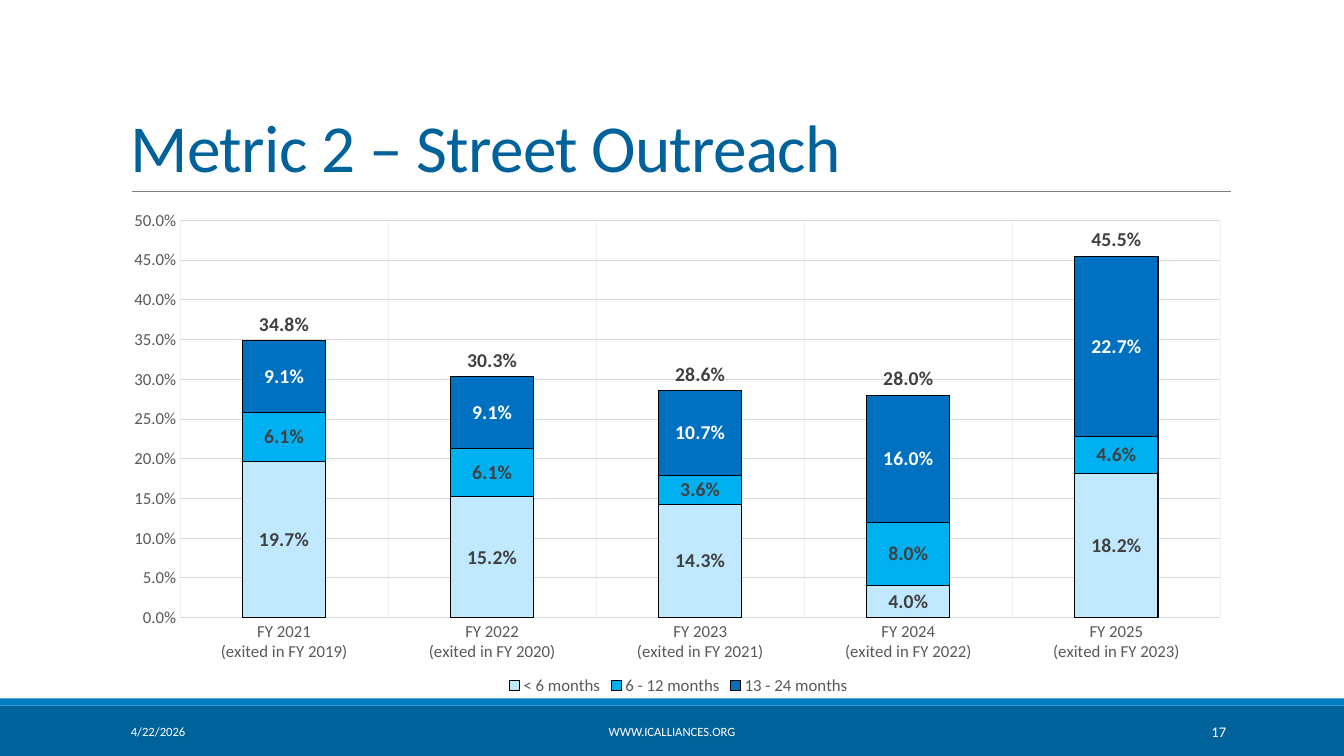
"""Build the Metric 2 street outreach slide with a stacked column chart and totals."""
import pptx
import pptx.chart.data
import pptx.dml.color
import pptx.enum.chart
import pptx.enum.shapes
import pptx.enum.text
import pptx.oxml
import pptx.oxml.ns
import pptx.util

Inches = pptx.util.Inches
Pt = pptx.util.Pt
qn = pptx.oxml.ns.qn
Align = pptx.enum.text.PP_ALIGN
Anchor = pptx.enum.text.MSO_ANCHOR
FONT = "Calibri"
COLORS = {
    "navy": "00629B", "band": "007EC4", "rule": "808080", "white": "FFFFFF",
    "grid": "D9D9D9", "faint": "F2F2F2", "axis": "595959", "label": "404040",
    "black": "000000", "short": "C0E9FF", "middle": "00B0F0", "long": "0070C0",
}


def rgb(name):
    return pptx.dml.color.RGBColor.from_string(COLORS[name])


def set_font(font, size, color, bold=False):
    font.name = FONT
    font.size = Pt(size)
    font.bold = bold
    font.color.rgb = rgb(color)


deck = pptx.Presentation()
deck.slide_width = Inches(13.33)
deck.slide_height = Inches(7.5)
slide = deck.slides.add_slide(deck.slide_layouts[6])

for top, height, color in [(7, 0.5, "navy"), (6.93, 0.07, "band")]:
    footer_band = slide.shapes.add_shape(
        pptx.enum.shapes.MSO_SHAPE.RECTANGLE,
        Inches(0), Inches(top), Inches(13.33), Inches(height))
    footer_band.shadow.inherit = False
    footer_band.fill.solid()
    footer_band.fill.fore_color.rgb = rgb(color)
    footer_band.line.fill.background()

title_rule = slide.shapes.add_connector(
    pptx.enum.shapes.MSO_CONNECTOR.STRAIGHT,
    Inches(1.31), Inches(1.9), Inches(12.21), Inches(1.9))
title_rule.line.color.rgb = rgb("rule")
title_rule.line.width = Pt(0.5)
title_rule._element.spPr.append(pptx.oxml.parse_xml(
    f'<a:effectLst {pptx.oxml.ns.nsdecls("a")}/>'))

texts = [
    ("Metric 2 – Street Outreach", 1.2, 0.31, 11, 1.59, 48, "navy", Align.LEFT, Anchor.BOTTOM),
    ("4/22/2026", 1.2, 7.06, 2.7, 0.4, 9, "white", Align.LEFT, Anchor.MIDDLE),
    ("WWW.ICALLIANCES.ORG", 4.03, 7.06, 5.27, 0.4, 9, "white", Align.CENTER, Anchor.MIDDLE),
    ("17", 10.83, 7.06, 1.43, 0.4, 10.5, "white", Align.RIGHT, Anchor.MIDDLE),
]
for words, left, top, width, height, size, color, align, anchor in texts:
    frame = slide.shapes.add_textbox(
        Inches(left), Inches(top), Inches(width), Inches(height)).text_frame
    frame.word_wrap = True
    frame.vertical_anchor = anchor
    paragraph = frame.paragraphs[0]
    paragraph.alignment = align
    run = paragraph.add_run()
    run.text = words
    set_font(run.font, size, color)
    if size == 48:
        paragraph.line_spacing = 0.85
        run.font._element.set("spc", "-50")

durations = [
    ("< 6 months", [0.197, 0.152, 0.143, 0.04, 0.182], "short", "label"),
    ("6 - 12 months", [0.061, 0.061, 0.036, 0.08, 0.046], "middle", "label"),
    ("13 - 24 months", [0.091, 0.091, 0.107, 0.16, 0.227], "long", "white"),
]
returns = pptx.chart.data.CategoryChartData(number_format="0.0%")
returns.categories = [f"FY {year}\n(exited in FY {year - 2})" for year in range(2021, 2026)]
for name, values, _, _ in durations:
    returns.add_series(name, values)
returns.add_series("Series 4", [0.348, 0.303, 0.286, 0.28, 0.455])

chart = slide.shapes.add_chart(
    pptx.enum.chart.XL_CHART_TYPE.COLUMN_STACKED,
    Inches(1.2), Inches(1.9), Inches(11.06), Inches(5.04), returns).chart
set_font(chart.font, 10, "black")
chart.has_title = False
columns = chart.plots[0]
columns.gap_width = 150
columns.overlap = 100
columns.vary_by_categories = False

column_xml = columns._element
total_xml = column_xml.findall(qn("c:ser"))[3]
for invert in total_xml.findall(qn("c:invertIfNegative")):
    total_xml.remove(invert)
axis_ids = "".join(
    f'<c:axId val="{axis.get("val")}"/>' for axis in column_xml.findall(qn("c:axId")))
line_xml = pptx.oxml.parse_xml(
    f'<c:lineChart {pptx.oxml.ns.nsdecls("c")}><c:grouping val="standard"/>'
    f'<c:varyColors val="0"/><c:marker val="1"/>{axis_ids}</c:lineChart>')
line_xml.insert(2, total_xml)
column_xml.addnext(line_xml)

plot_area = column_xml.getparent()
for layout in plot_area.findall(qn("c:layout")):
    plot_area.remove(layout)
bounds = "".join(
    f'<c:{key} val="{value}"/>'
    for key, value in [("x", 0.053), ("y", 0.057), ("w", 0.933), ("h", 0.782)])
plot_area.insert(0, pptx.oxml.parse_xml(
    f'<c:layout {pptx.oxml.ns.nsdecls("c")}><c:manualLayout><c:layoutTarget val="inner"/>'
    f'<c:xMode val="edge"/><c:yMode val="edge"/>{bounds}</c:manualLayout></c:layout>'))

for series, (_, _, fill, _) in zip(chart.plots[0].series, durations):
    series.format.fill.solid()
    series.format.fill.fore_color.rgb = rgb(fill)
    series.format.line.color.rgb = rgb("black")
    series.format.line.width = Pt(0.75)

totals = chart.plots[1].series[0]
totals.smooth = False
totals.format.line.fill.background()
totals.marker.style = pptx.enum.chart.XL_MARKER_STYLE.NONE

label_colors = [duration[3] for duration in durations] + ["label"]
for series, color in zip([*chart.plots[0].series, totals], label_colors):
    labels = series.data_labels
    labels.show_value = True
    labels.number_format = "0.0%"
    labels.number_format_is_linked = False
    set_font(labels.font, 14, color, True)
totals.data_labels.position = pptx.enum.chart.XL_LABEL_POSITION.ABOVE

years, shares = chart.category_axis, chart.value_axis
for axis, grid in [(years, "faint"), (shares, "grid")]:
    axis.major_tick_mark = pptx.enum.chart.XL_TICK_MARK.NONE
    axis.minor_tick_mark = pptx.enum.chart.XL_TICK_MARK.NONE
    axis.has_major_gridlines = True
    axis.major_gridlines.format.line.color.rgb = rgb(grid)
    axis.major_gridlines.format.line.width = Pt(0.75)
    set_font(axis.tick_labels.font, 12, "axis")
years.format.line.color.rgb = rgb("grid")
years.format.line.width = Pt(0.75)
shares.format.line.fill.background()
shares.minimum_scale = 0
shares.maximum_scale = 0.5
shares.major_unit = 0.05
shares.tick_labels.number_format = "0.0%"
shares.tick_labels.number_format_is_linked = False

chart.has_legend = True
chart.legend.position = pptx.enum.chart.XL_LEGEND_POSITION.BOTTOM
chart.legend.include_in_layout = False
set_font(chart.legend.font, 12, "axis")
chart.legend._element.get_or_add_legendPos().addnext(pptx.oxml.parse_xml(
    f'<c:legendEntry {pptx.oxml.ns.nsdecls("c")}><c:idx val="3"/>'
    '<c:delete val="1"/></c:legendEntry>'))

deck.save("out.pptx")
